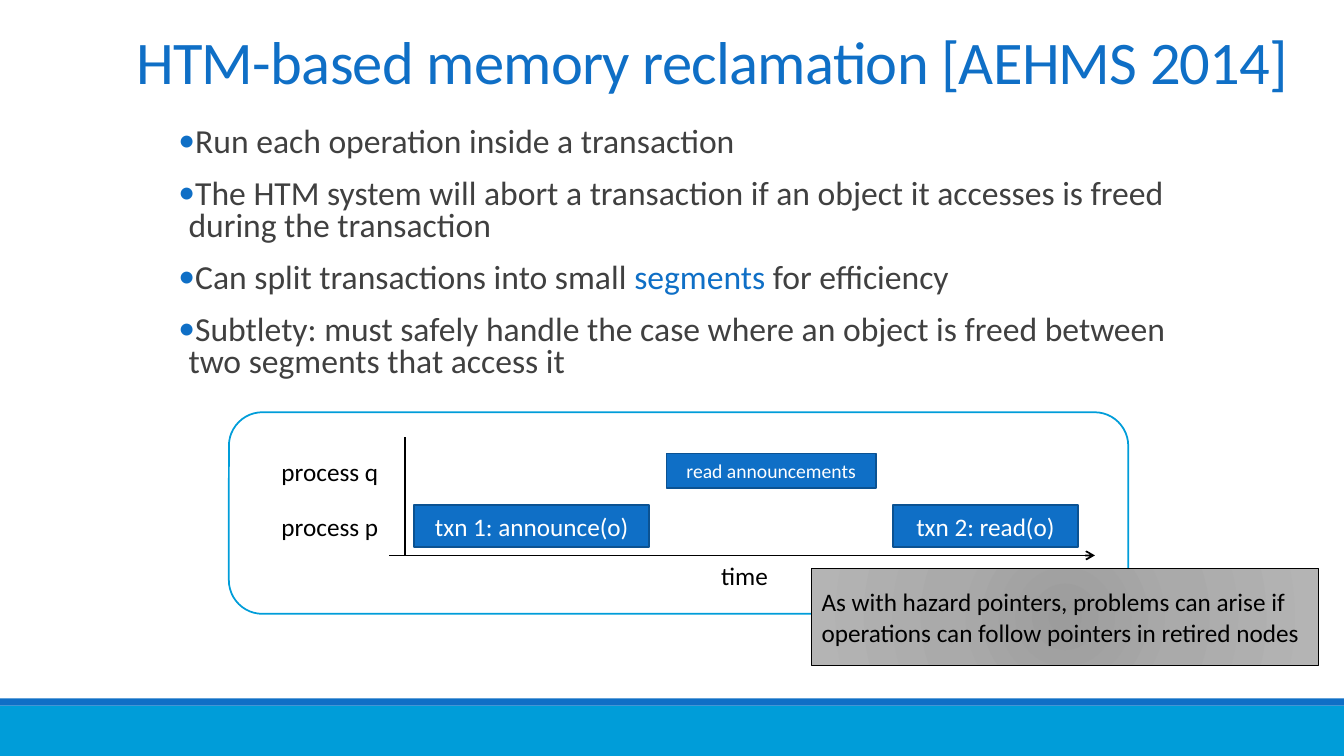
from pptx import Presentation
from pptx.dml.color import RGBColor
from pptx.enum.shapes import MSO_CONNECTOR as Connector, MSO_SHAPE as Preset
from pptx.enum.text import MSO_ANCHOR as Anchor, MSO_AUTO_SIZE as AutoSize, PP_ALIGN as Align
from pptx.oxml import parse_xml
from pptx.oxml.ns import nsdecls, qn
from pptx.util import Inches, Pt
from lxml.etree import SubElement

BLUE = RGBColor(0x0F, 0x6F, 0xC6)
DARK_BLUE = RGBColor(0x0B, 0x52, 0x92)
CYAN = RGBColor(0x00, 0x9D, 0xD9)
GREY = RGBColor(0x40, 0x40, 0x40)
BLACK = RGBColor(0, 0, 0)
WHITE = RGBColor(0xFF, 0xFF, 0xFF)
NOTE_STOPS = {0: "9C9C9C", 45: "AAAAAA", 100: "B4B4B4"}
FONT = "Calibri"
WIDTH, HEIGHT = 13.33, 7.5

BULLETS = [
    ["Run each operation inside a transaction"],
    ["The HTM system will abort a transaction if an object it accesses is freed during the transaction"],
    ["Can split transactions into small ", "segments", " for efficiency"],
    ["Subtlety: must safely handle the case where an object is freed between two segments that access it"],
]
# Transactions: text, left, top, width, height (from the panel's corner), size
STEPS = [
    ("txn 1: announce(o)", 1.84, 0.92, 2.33, 0.42, 18),
    ("txn 2: read(o)", 6.59, 0.92, 1.83, 0.42, 18),
    ("read announcements", 4.34, 0.41, 2.08, 0.34, 14),
]
PROCESS_TOPS = {"process p": 0.93, "process q": 0.39}


def set_attributes(target, values):
    for name, value in values.items():
        setattr(target, name, value)


def add_run(paragraph, text, size, color):
    run = paragraph.add_run()
    run.text = text
    set_attributes(run.font, {"name": FONT, "size": Pt(size)})
    run.font.color.rgb = color
    return run


def write(shape, text, size, color, align, anchor=Anchor.TOP):
    set_attributes(shape.text_frame, {"word_wrap": True, "vertical_anchor": anchor})
    paragraph = shape.text_frame.paragraphs[0]
    paragraph.alignment = align
    add_run(paragraph, text, size, color)


def add_box(slide, preset, box, fill=None, line=None, line_width=1.25):
    shape = slide.shapes.add_shape(preset, *map(Inches, box))
    shape.shadow.inherit = False
    if fill is None:
        shape.fill.background()
    else:
        shape.fill.solid()
        shape.fill.fore_color.rgb = fill
    if line is None:
        shape.line.fill.background()
    else:
        shape.line.color.rgb = line
        shape.line.width = Pt(line_width)
    return shape


def add_label(slide, box, text, align):
    label = slide.shapes.add_textbox(*map(Inches, box))
    write(label, text, 18, BLACK, align)


def add_axis(slide, start, end, arrow=False):
    axis = slide.shapes.add_connector(Connector.STRAIGHT, *map(Inches, start + end))
    axis.line.color.rgb = BLACK
    axis.line.width = Pt(1.25)
    if arrow:
        SubElement(axis.line._get_or_add_ln(), qn("a:tailEnd"), type="arrow")
    SubElement(axis._element.spPr, qn("a:effectLst"))


def place(shape, box):
    set_attributes(shape, dict(zip(("left", "top", "width", "height"), map(Inches, box))))
    set_attributes(shape.text_frame, {"auto_size": AutoSize.NONE, "word_wrap": True})


def add_footer(slide, top):
    add_box(slide, Preset.RECTANGLE, (0, top, WIDTH, HEIGHT - top), CYAN)
    add_box(slide, Preset.RECTANGLE, (0, top - 0.07, WIDTH, 0.07), BLUE)


def fill_title(title, box):
    place(title, box)
    title.text_frame.vertical_anchor = Anchor.BOTTOM
    paragraph = title.text_frame.paragraphs[0]
    set_attributes(paragraph, {"alignment": Align.LEFT, "line_spacing": 0.85})
    run = add_run(paragraph, "HTM-based memory reclamation [AEHMS 2014]", 43.2, BLUE)
    run.font._element.set("spc", "-50")


def fill_body(body, box):
    place(body, box)
    frame = body.text_frame
    set_attributes(frame, {"margin_left": 0, "margin_right": 0, "vertical_anchor": Anchor.TOP})
    for index, parts in enumerate(BULLETS):
        paragraph = frame.add_paragraph() if index else frame.paragraphs[0]
        set_attributes(paragraph, {"line_spacing": 0.8, "space_after": Pt(2),
                                   "space_before": Pt(12 if index else 0)})
        properties = paragraph._p.get_or_add_pPr()
        properties.set("marL", str(Inches(0.1)))
        properties.set("indent", str(-Inches(0.1)))
        bullet_color = SubElement(properties, qn("a:buClr"))
        SubElement(bullet_color, qn("a:srgbClr"), val=str(BLUE))
        SubElement(properties, qn("a:buFont"), typeface=FONT)
        SubElement(properties, qn("a:buChar"), char="•")
        for part in parts:
            add_run(paragraph, part, 24, BLUE if part == "segments" else GREY)


def add_timeline(slide, box):
    left, top = box[:2]
    add_box(slide, Preset.ROUNDED_RECTANGLE, box, WHITE, CYAN)
    # Axes and labels
    base = top + 1.42
    add_axis(slide, (left + 1.59, base), (left + 8.59, base), arrow=True)
    add_axis(slide, (left + 1.75, top + 0.25), (left + 1.75, base))
    add_label(slide, (left + 2.28, base, 5.67, 0.4), "time", Align.CENTER)
    for name, offset in PROCESS_TOPS.items():
        add_label(slide, (left + 0.25, top + offset, 1.33, 0.4), name, Align.RIGHT)
    # Steps of the two processes
    for text, x, y, width, height, size in STEPS:
        step = add_box(slide, Preset.RECTANGLE, (left + x, top + y, width, height), BLUE, DARK_BLUE)
        write(step, text, size, WHITE, Align.CENTER, Anchor.MIDDLE)


def add_note(slide, box):
    note = add_box(slide, Preset.RECTANGLE, box, line=BLACK, line_width=1)
    stops = "".join(f'<a:gs pos="{position * 1000}"><a:srgbClr val="{color}"/></a:gs>'
                    for position, color in NOTE_STOPS.items())
    gradient = parse_xml(
        f'<a:gradFill {nsdecls("a")} rotWithShape="1"><a:gsLst>{stops}</a:gsLst>'
        '<a:path path="circle"><a:fillToRect l="100000" t="100000" r="100000" b="100000"/>'
        '</a:path></a:gradFill>')
    properties = note._element.spPr
    properties.replace(properties.find(qn("a:noFill")), gradient)
    write(note, "As with hazard pointers, problems can arise if operations can follow "
                "pointers in retired nodes", 18, BLACK, Align.LEFT, Anchor.MIDDLE)


def main():
    presentation = Presentation()
    presentation.slide_width = Inches(WIDTH)
    presentation.slide_height = Inches(HEIGHT)
    slide = presentation.slides.add_slide(presentation.slide_layouts[1])
    add_footer(slide, 7)
    fill_title(slide.shapes.title, (1.25, 0.25, 11.64, 0.76))
    fill_body(slide.placeholders[1], (1.77, 1.22, 10.06, 2.84))
    add_timeline(slide, (2.27, 4.09, 8.92, 2))
    add_note(slide, (8.05, 5.64, 5.03, 0.96))
    presentation.save("out.pptx")


if __name__ == "__main__":
    main()
